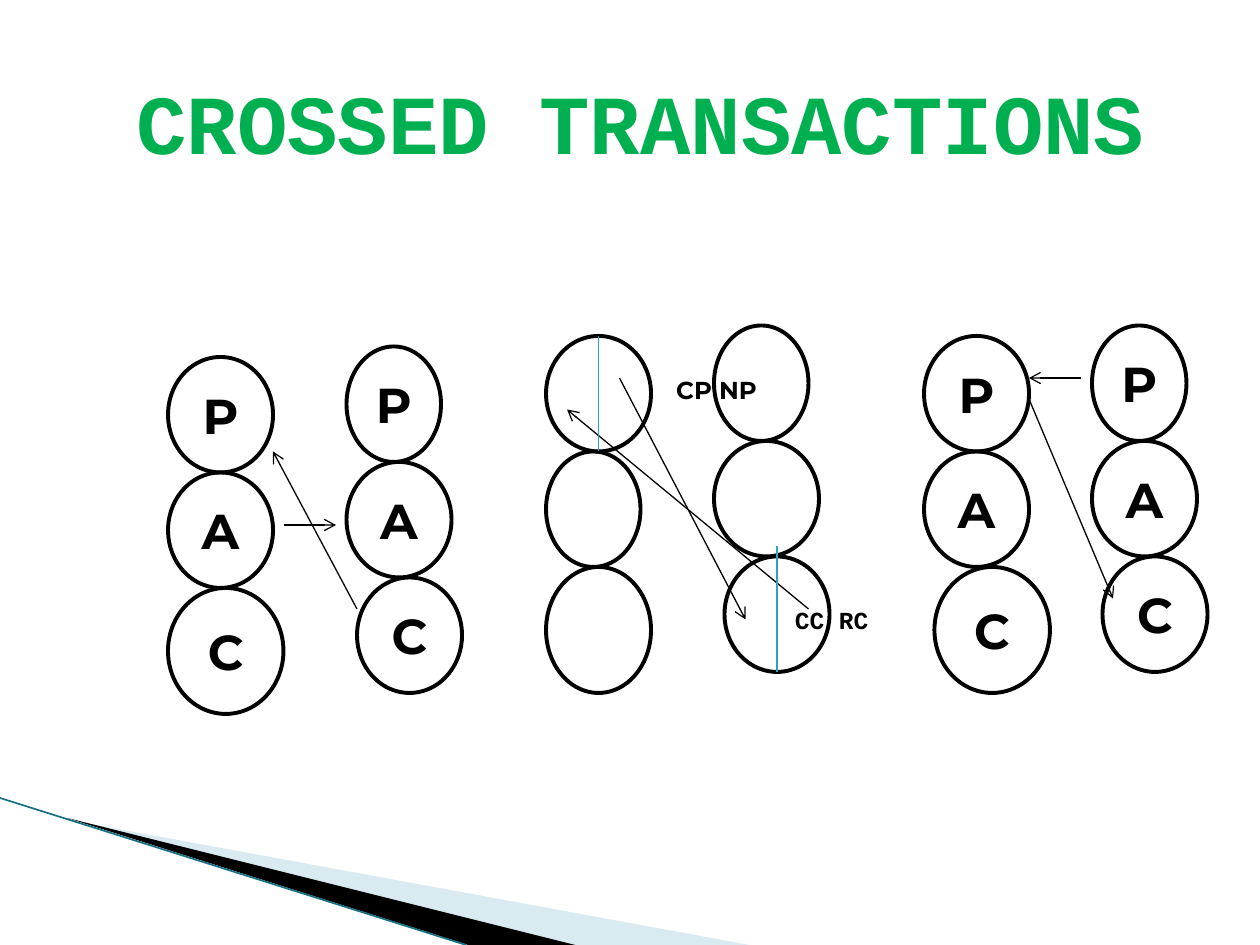
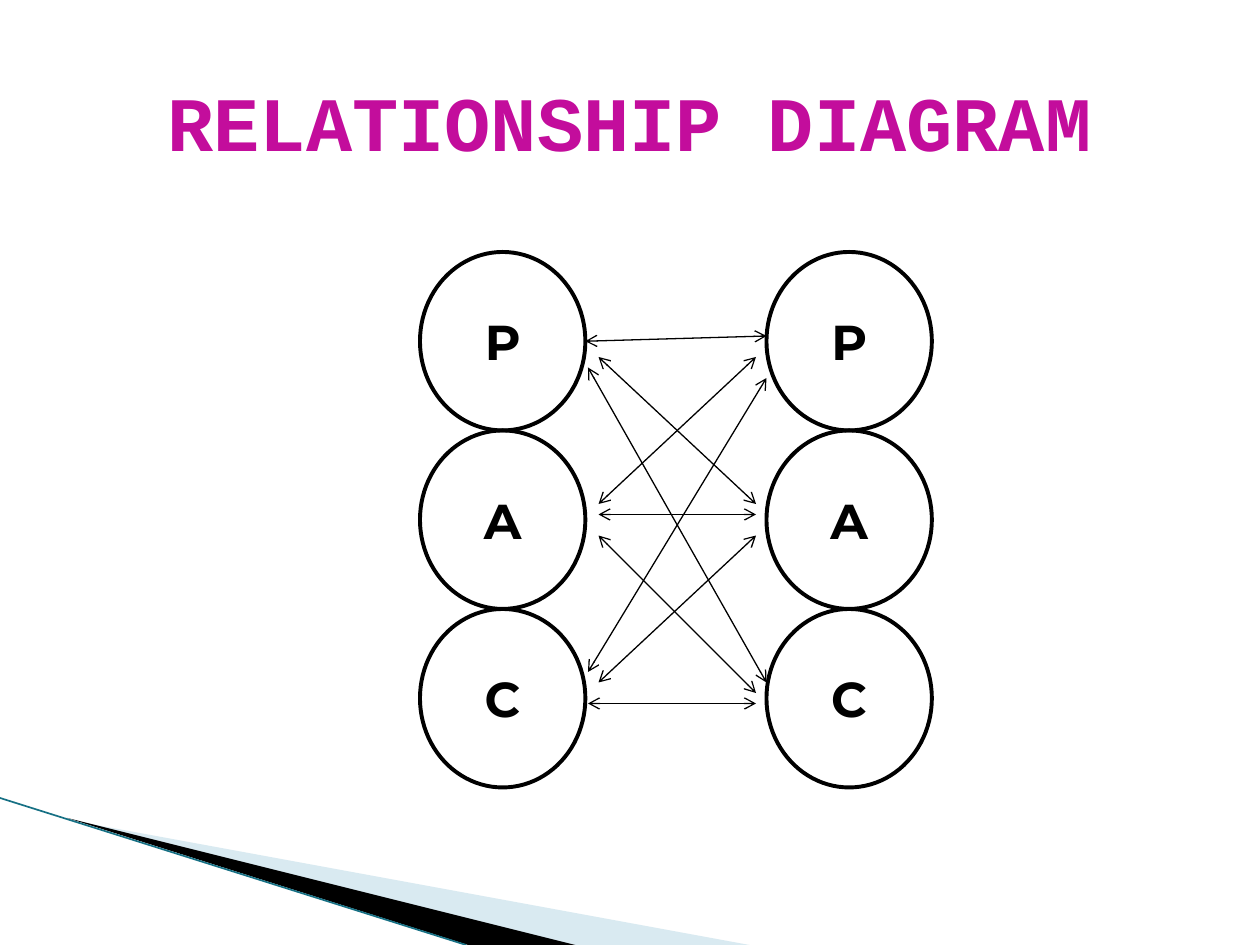
from lxml import etree
from pptx import Presentation
from pptx.dml.color import RGBColor
from pptx.enum.shapes import MSO_CONNECTOR, MSO_SHAPE
from pptx.enum.text import MSO_ANCHOR, PP_ALIGN
from pptx.oxml.ns import qn
from pptx.util import Inches, Pt

STRAIGHT = MSO_CONNECTOR.STRAIGHT
ELLIPSE = MSO_SHAPE.OVAL
CENTER, LEFT = PP_ALIGN.CENTER, PP_ALIGN.LEFT
MIDDLE = MSO_ANCHOR.MIDDLE

BLACK = RGBColor(0x00, 0x00, 0x00)
GREEN = RGBColor(0x00, 0xB0, 0x50)
MAGENTA = RGBColor(0xC3, 0x0D, 0x9C)
TEAL = RGBColor(0x2D, 0xA2, 0xBF)
DARK_TEAL = RGBColor(0x16, 0x70, 0x84)
PALE_BLUE = RGBColor(0xA0, 0xCB, 0xDC)

MONO, SANS = "Courier New", "Montserrat"
TITLE_ONLY = 5
COLUMNS, ROWS = 120, 90
EGO_STATES = "PAC"


class Diagram:
    """Holds the deck, the grid and the page being drawn."""

    def __init__(self):
        self.deck = Presentation()
        self.deck.slide_width = Inches(10)
        self.deck.slide_height = Inches(7.5)
        self.page = None

    def cells(self, column, row):
        """Turn a grid position or size into slide lengths."""
        return (round(column * self.deck.slide_width / COLUMNS),
                round(row * self.deck.slide_height / ROWS))

    def new_page(self, title, color, size, area):
        layout = self.deck.slide_layouts[TITLE_ONLY]
        self.page = self.deck.slides.add_slide(layout)
        self.swoosh()
        box = self.page.shapes.title
        left, top, width, height = area
        box.left, box.top = self.cells(left, top)
        box.width, box.height = self.cells(width, height)
        self.add_text(box, title, MONO, size, color)

    def add_text(self, box, words, font, size, color=BLACK, align=CENTER):
        frame = box.text_frame
        frame.vertical_anchor = MIDDLE
        para = frame.paragraphs[0]
        para.alignment = align
        span = para.add_run()
        span.text = words
        span.font.name, span.font.size = font, Pt(size)
        span.font.bold = True
        span.font.color.rgb = color

    def label(self, words, font, column, row, width, height):
        box = self.page.shapes.add_textbox(*self.cells(column, row),
                                           *self.cells(width, height))
        frame = box.text_frame
        frame.word_wrap = False
        frame.margin_left = frame.margin_right = 0
        frame.margin_top = frame.margin_bottom = 0
        self.add_text(box, words, font, 14, align=LEFT)

    def circle(self, column, row, width, height, letter=""):
        shape = self.page.shapes.add_shape(
            ELLIPSE, *self.cells(column, row), *self.cells(width, height))
        shape.shadow.inherit = False
        shape.fill.background()
        shape.line.color.rgb = BLACK
        shape.line.width = Pt(2.25)
        if letter:
            shape.text_frame.word_wrap = False
            self.add_text(shape, letter, SANS, 28)

    def stack(self, row, circles, letters):
        """Pile touching circles, each given as column, width and height."""
        for (column, width, height), letter in zip(circles, letters):
            self.circle(column, row, width, height, letter)
            row += height

    def line(self, start, end, color=BLACK, weight=0.75, arrows=()):
        connector = self.page.shapes.add_connector(
            STRAIGHT, *self.cells(*start), *self.cells(*end))
        connector.line.color.rgb = color
        connector.line.width = Pt(weight)
        properties = connector._element.spPr
        outline = properties.find(qn("a:ln"))
        for tip in arrows:
            etree.SubElement(outline, qn(f"a:{tip}"), type="arrow")
        etree.SubElement(properties, qn("a:effectLst"))

    def wedge(self, corners, color, opacity=100):
        points = [self.cells(*corner) for corner in corners]
        builder = self.page.shapes.build_freeform(*points[0])
        builder.add_line_segments(points[1:])
        shape = builder.convert_to_shape()
        shape.shadow.inherit = False
        shape.line.fill.background()
        shape.fill.solid()
        shape.fill.fore_color.rgb = color
        if opacity < 100:
            tint = shape._element.spPr.find(qn("a:solidFill"))[0]
            etree.SubElement(tint, qn("a:alpha"), val=str(opacity * 1000))

    def swoosh(self):
        """Draw the wedges that decorate the lower left of every page."""
        self.wedge([(6.6, 78.1), (71.4, 90), (54.7, 90)], PALE_BLUE, 40)
        self.wedge([(6.4, 77.9), (54.8, 90), (44.6, 90)], BLACK)
        self.line((0, 76), (44.4, 90), DARK_TEAL, 0.95)


def crossed_transactions(diagram):
    diagram.new_page("CROSSED TRANSACTIONS", GREEN, 48, (5, 6, 112, 11))
    diagram.label("CP NP", SANS, 64.4, 35.6, 8, 3)
    diagram.label("CC RC", MONO, 75.7, 57.5, 8, 3)

    # Each pair: top row, left circles, column of the right person, letters
    pairs = [
        (34, [(16, 10, 11), (16, 10, 11), (16, 11, 12)], 33, EGO_STATES),
        (32, [(52, 10, 11), (52, 9, 11), (52, 10, 12)], 68, [""] * 3),
        (32, [(88, 10, 11), (88, 10, 11), (89, 11, 12)], 104, EGO_STATES),
    ]
    for row, left_person, column, letters in pairs:
        right_person = [(column, 9, 11), (column, 10, 11), (column + 1, 10, 11)]
        diagram.stack(row, left_person, letters)
        diagram.stack(row - 1, right_person, letters)

    messages = [
        ((27, 50), (32, 50)), ((34, 58), (26, 43)),
        ((59, 36), (71, 59)), ((77, 58), (54, 39)),
        ((103, 36), (98, 36)), ((98, 38), (106, 57)),
    ]
    for start, end in messages:
        diagram.line(start, end, arrows=["tailEnd"])
    for column, top, bottom in [(57, 32, 43), (74, 52, 64)]:
        diagram.line((column, top), (column, bottom), TEAL)


def relationship_diagram(diagram):
    diagram.new_page("RELATIONSHIP DIAGRAM", MAGENTA, 44, (6, 4, 108, 15))
    for column in (40, 73):
        diagram.stack(24, [(column, 15.75, 17)] * 3, EGO_STATES)

    relations = [
        ((55.75, 32.5), (73, 32)), ((57, 49), (72, 49)), ((56, 67), (72, 67)),
        ((57, 34), (72, 48)), ((57, 48), (72, 34)),
        ((57, 51), (72, 66)), ((57, 65), (72, 51)),
        ((56, 35), (73, 65)), ((56, 64), (73, 36)),
    ]
    for start, end in relations:
        diagram.line(start, end, arrows=["headEnd", "tailEnd"])


def main():
    diagram = Diagram()
    crossed_transactions(diagram)
    relationship_diagram(diagram)
    diagram.deck.save("out.pptx")


if __name__ == "__main__":
    main()
